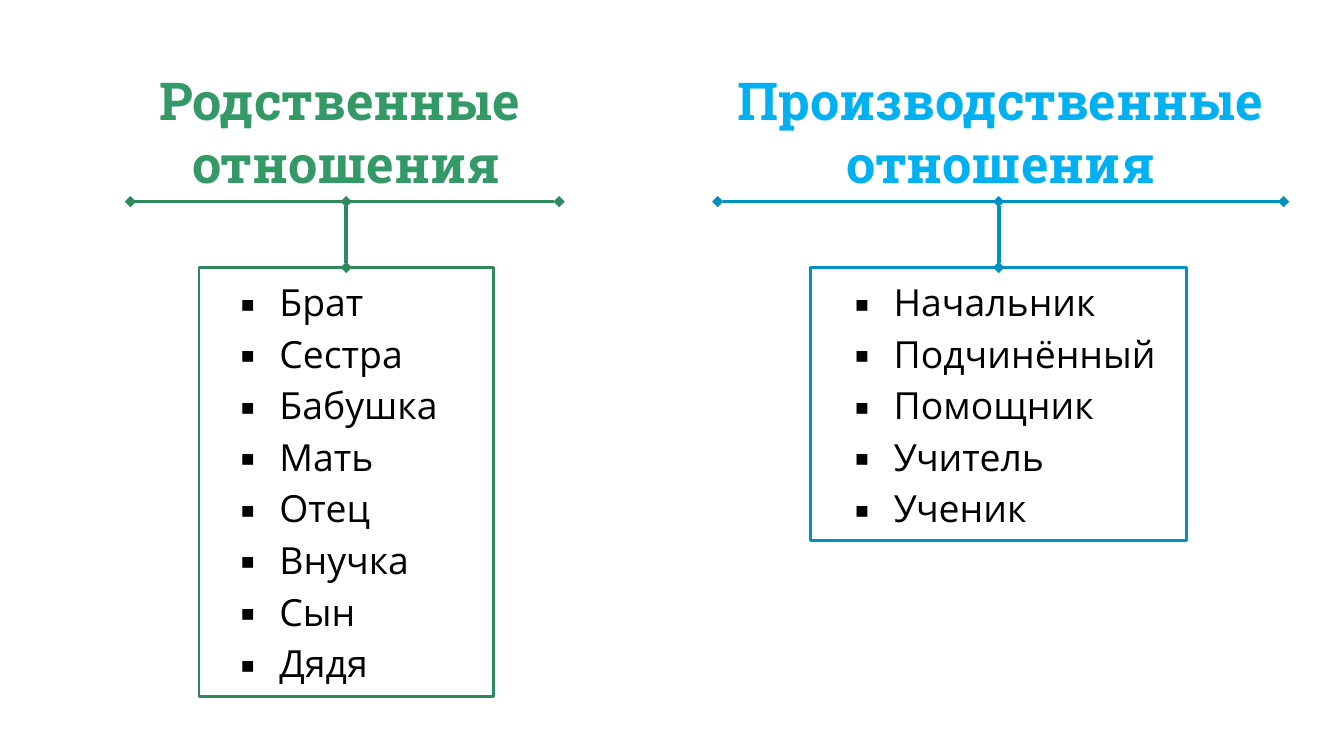
from lxml.etree import SubElement
from pptx import Presentation
from pptx.dml.color import RGBColor
from pptx.enum.shapes import MSO_CONNECTOR, MSO_SHAPE
from pptx.enum.text import MSO_AUTO_SIZE, PP_ALIGN
from pptx.oxml.ns import qn
from pptx.util import Pt

RULE_TOP = 108
FRAME_TOP = 143.3

# title box, list box and frame: left, width (and height); rule: left, right
columns = [
    {
        "title": ["Родственные ", "отношения"],
        "words": ["Брат", "Сестра", "Бабушка", "Мать", "Отец", "Внучка", "Сын", "Дядя"],
        "title_color": "339966", "line_color": "2E8A5C",
        "title_box": (76.3, 218.2), "list_box": (121.7, 133.2, 230.4),
        "frame": (106.6, 157.7, 229.7), "rule": (69.8, 299.5),
    },
    {
        "title": ["Производственные", "отношения"],
        "words": ["Начальник", "Подчинённый", "Помощник", "Учитель", "Ученик"],
        "title_color": "00B0F0", "line_color": "0091C4",
        "title_box": (385.9, 300.2), "list_box": (450.7, 185.8, 146.9),
        "frame": (434.2, 201.6, 146.2), "rule": (384.5, 687.6),
    },
]


def color(hex_string):
    return RGBColor.from_string(hex_string)


def add_diamond_line(page, start, end, line_color):
    """Add a 2 pt straight connector with a diamond at both ends."""
    line = page.shapes.add_connector(
        MSO_CONNECTOR.STRAIGHT, *(Pt(value) for value in start + end))
    line.line.color.rgb = color(line_color)
    line.line.width = Pt(2)
    outline = line.line._get_or_add_ln()
    for tag in ("a:headEnd", "a:tailEnd"):
        SubElement(outline, qn(tag), type="diamond")
    SubElement(line._element.spPr, qn("a:effectLst"))
    return line


deck = Presentation()
deck.slide_width, deck.slide_height = Pt(720), Pt(405)
page = deck.slides.add_slide(deck.slide_layouts[6])

for column in columns:
    # Title
    left, width = column["title_box"]
    box = page.shapes.add_textbox(Pt(left), Pt(33.1), Pt(width), Pt(74.9))
    frame = box.text_frame
    frame.word_wrap = False
    frame.auto_size = MSO_AUTO_SIZE.SHAPE_TO_FIT_TEXT
    for number, text in enumerate(column["title"]):
        para = frame.add_paragraph() if number else frame.paragraphs[0]
        para.alignment = PP_ALIGN.CENTER
        span = para.add_run()
        span.text = text
        span.font.name = "Roboto Slab"
        span.font.size = Pt(28)
        span.font.bold = True
        span.font.color.rgb = color(column["title_color"])

    # Bulleted words
    left, width, height = column["list_box"]
    box = page.shapes.add_textbox(Pt(left), Pt(142.6), Pt(width), Pt(height))
    frame = box.text_frame
    frame.word_wrap = True
    frame.auto_size = MSO_AUTO_SIZE.SHAPE_TO_FIT_TEXT
    for number, text in enumerate(column["words"]):
        para = frame.add_paragraph() if number else frame.paragraphs[0]
        para.line_spacing = 1.15
        properties = para._p.get_or_add_pPr()
        properties.set("marL", str(Pt(20.9)))
        properties.set("indent", str(-Pt(20.9)))
        SubElement(properties, qn("a:buFont"), typeface="Open Sans")
        SubElement(properties, qn("a:buChar"), char="▪")
        span = para.add_run()
        span.text = text
        span.font.name = "Open Sans"
        span.font.size = Pt(20)
        span.font.color.rgb = color("000000")

    # Frame around the words
    left, width, height = column["frame"]
    border = page.shapes.add_shape(
        MSO_SHAPE.RECTANGLE, Pt(left), Pt(FRAME_TOP), Pt(width), Pt(height))
    border.shadow.inherit = False
    border.fill.background()
    border.line.color.rgb = color(column["line_color"])
    border.line.width = Pt(1.5)

    # Rule under the title and stem down to the frame
    start, end = column["rule"]
    add_diamond_line(page, (start, RULE_TOP), (end, RULE_TOP), column["line_color"])
    middle = left + width / 2
    stem = add_diamond_line(
        page, (middle, RULE_TOP), (middle, FRAME_TOP), column["line_color"])
    stem.end_connect(border, 0)

deck.save("out.pptx")
